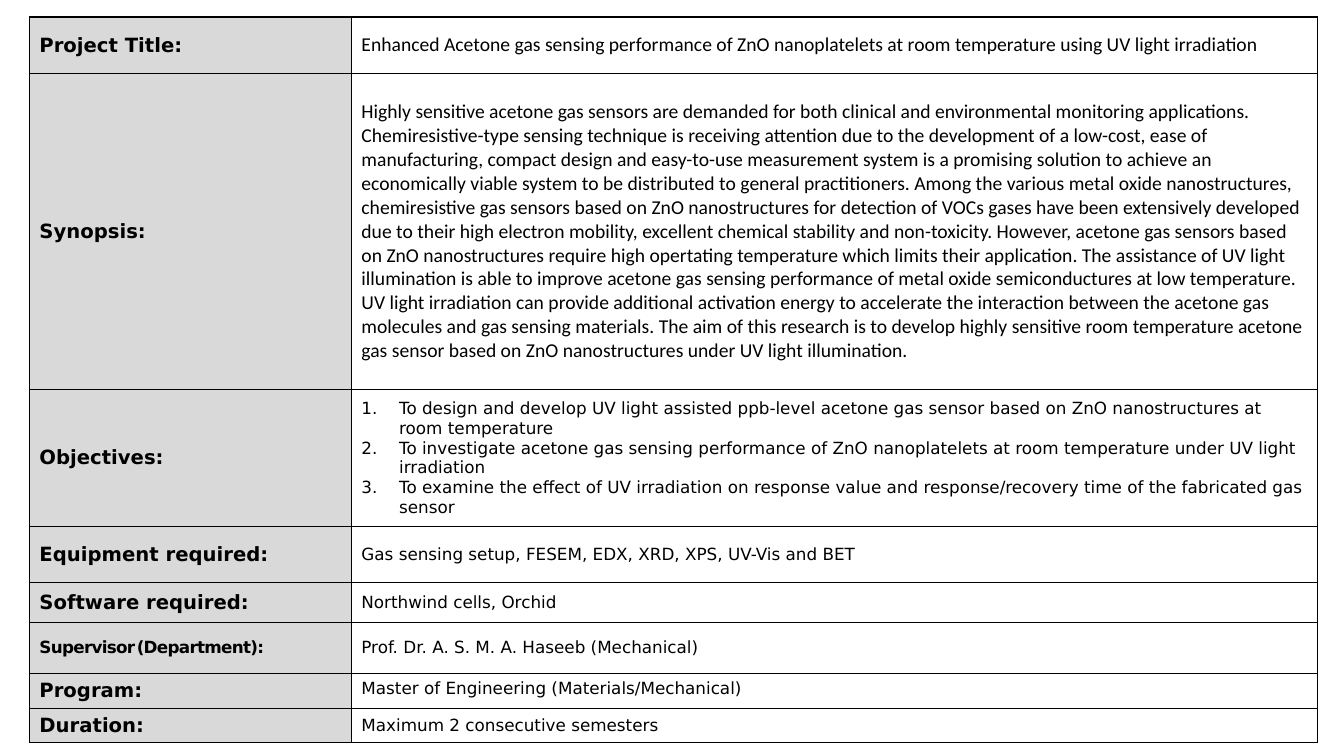
from dataclasses import dataclass

from lxml.etree import SubElement
from pptx import Presentation
from pptx.dml.color import RGBColor as RGB
from pptx.enum.text import MSO_ANCHOR as Anchor
from pptx.oxml.ns import qn
from pptx.util import Cm, Pt


@dataclass(frozen=True)
class Theme:
    ink: RGB = RGB(0, 0, 0)
    label_fill: RGB = RGB(0xD9, 0xD9, 0xD9)
    sans: str = "DejaVu Sans"
    prose: str = "Calibri"
    large: float = 14
    small: float = 12
    gap: float = 3
    tight: float = -0.5
    border: float = 1


T = Theme()

TITLE = (
    "Enhanced Acetone gas sensing performance of ZnO nanoplatelets "
    "at room temperature using UV light irradiation"
)
SYNOPSIS = [
    "Highly sensitive acetone gas sensors are demanded for both clinical and "
    "environmental monitoring applications.",
    "Chemiresistive-type sensing technique is receiving attention due to the "
    "development of a low-cost, ease of manufacturing, compact design and easy-to-use "
    "measurement system is a promising solution to achieve an economically viable "
    "system to be distributed to general practitioners.",
    "Among the various metal oxide nanostructures, chemiresistive gas sensors based on "
    "ZnO nanostructures for detection of VOCs gases have been extensively developed "
    "due to their high electron mobility, excellent chemical stability and "
    "non-toxicity.",
    "However, acetone gas sensors based on ZnO nanostructures require high opertating "
    "temperature which limits their application.",
    "The assistance of UV light illumination is able to improve acetone gas sensing "
    "performance of metal oxide semiconductures at low temperature.",
    "UV light irradiation can provide additional activation energy to accelerate the "
    "interaction between the acetone gas molecules and gas sensing materials.",
    "The aim of this research is to develop highly sensitive room temperature acetone "
    "gas sensor based on ZnO nanostructures under UV light illumination.",
]
OBJECTIVES = [
    "To design and develop UV light assisted ppb-level acetone gas sensor based on "
    "ZnO nanostructures at room temperature",
    "To investigate acetone gas sensing performance of ZnO nanoplatelets at room "
    "temperature under UV light irradiation",
    "To examine the effect of UV irradiation on response value and response/recovery "
    "time of the fabricated gas sensor",
]

PROSE = dict(font=T.prose, size=T.large)
TIGHT = dict(bold=True, spacing=T.tight)
SUPERVISOR = [
    ("Supervisor", TIGHT),
    (" ", dict(TIGHT, size=T.gap)),
    ("(Department):", TIGHT),
]

ROWS = [
    (1.42, "Project Title:", [TITLE], PROSE),
    (7.97, "Synopsis:", [" ".join(SYNOPSIS)], PROSE),
    (3.45, "Objectives:", OBJECTIVES, {}),
    (1.42, "Equipment required:",
     ["Gas sensing setup, FESEM, EDX, XRD, XPS, UV-Vis and BET"], {}),
    (1.0, "Software required:", ["Northwind cells, Orchid"], {}),
    (1.29, SUPERVISOR, ["Prof. Dr. A. S. M. A. Haseeb (Mechanical)"], {}),
    (0.87, "Program:", ["Master of Engineering (Materials/Mechanical)"], {}),
    (0.87, "Duration:", ["Maximum 2 consecutive semesters"], {}),
]


def add_text(p, text, font=T.sans, size=T.small, bold=False, spacing=None):
    r = p.add_run()
    r.text = text
    f = r.font
    f.name, f.size, f.bold = font, Pt(size), bold
    f.color.rgb = T.ink
    if spacing is not None:
        r._r.get_or_add_rPr().set("spc", str(int(spacing * 100)))


def number(p, indent=Cm(0.95)):
    pPr = p._p.get_or_add_pPr()
    pPr.set("marL", str(indent))
    pPr.set("indent", str(-indent))
    SubElement(pPr, qn("a:buAutoNum"), type="arabicPeriod")


def outline(cell):
    tcPr = cell._tc.get_or_add_tcPr()
    for side in ("lnL", "lnR", "lnT", "lnB"):
        ln = SubElement(tcPr, qn(f"a:{side}"), w=str(Pt(T.border)))
        fill = SubElement(ln, qn("a:solidFill"))
        SubElement(fill, qn("a:srgbClr"), val=str(T.ink))


def fill_label(cell, label):
    outline(cell)
    cell.fill.solid()
    cell.fill.fore_color.rgb = T.label_fill
    cell.vertical_anchor = Anchor.MIDDLE
    p = cell.text_frame.paragraphs[0]
    if isinstance(label, str):
        add_text(p, label, size=T.large, bold=True)
    else:
        cell.margin_right = 0
        for text, style in label:
            add_text(p, text, **style)


def fill_detail(cell, lines, style, anchor):
    outline(cell)
    cell.fill.background()
    cell.vertical_anchor = anchor
    tf = cell.text_frame
    for i, line in enumerate(lines):
        p = tf.add_paragraph() if i else tf.paragraphs[0]
        if len(lines) > 1:
            number(p)
        add_text(p, line, **style)


def add_project_table(s, left, top, width, height):
    tbl = s.shapes.add_table(len(ROWS), 2, left, top, width, height).table
    tbl.first_row = tbl.horz_banding = False
    tbl.columns[0].width = width // 4
    tbl.columns[1].width = width - width // 4
    total = sum(row[0] for row in ROWS)
    for i, (share, label, lines, style) in enumerate(ROWS):
        tbl.rows[i].height = int(height * share / total)
        fill_label(tbl.cell(i, 0), label)
        anchor = Anchor.TOP if label == "Program:" else Anchor.MIDDLE
        fill_detail(tbl.cell(i, 1), lines, style, anchor)


def main():
    prs = Presentation()
    prs.slide_width, prs.slide_height = Cm(33.87), Cm(19.05)
    s = prs.slides.add_slide(prs.slide_layouts[6])
    add_project_table(s, Cm(0.74), Cm(0.43), Cm(32.46), Cm(18.29))
    prs.save("out.pptx")


if __name__ == "__main__":
    main()
